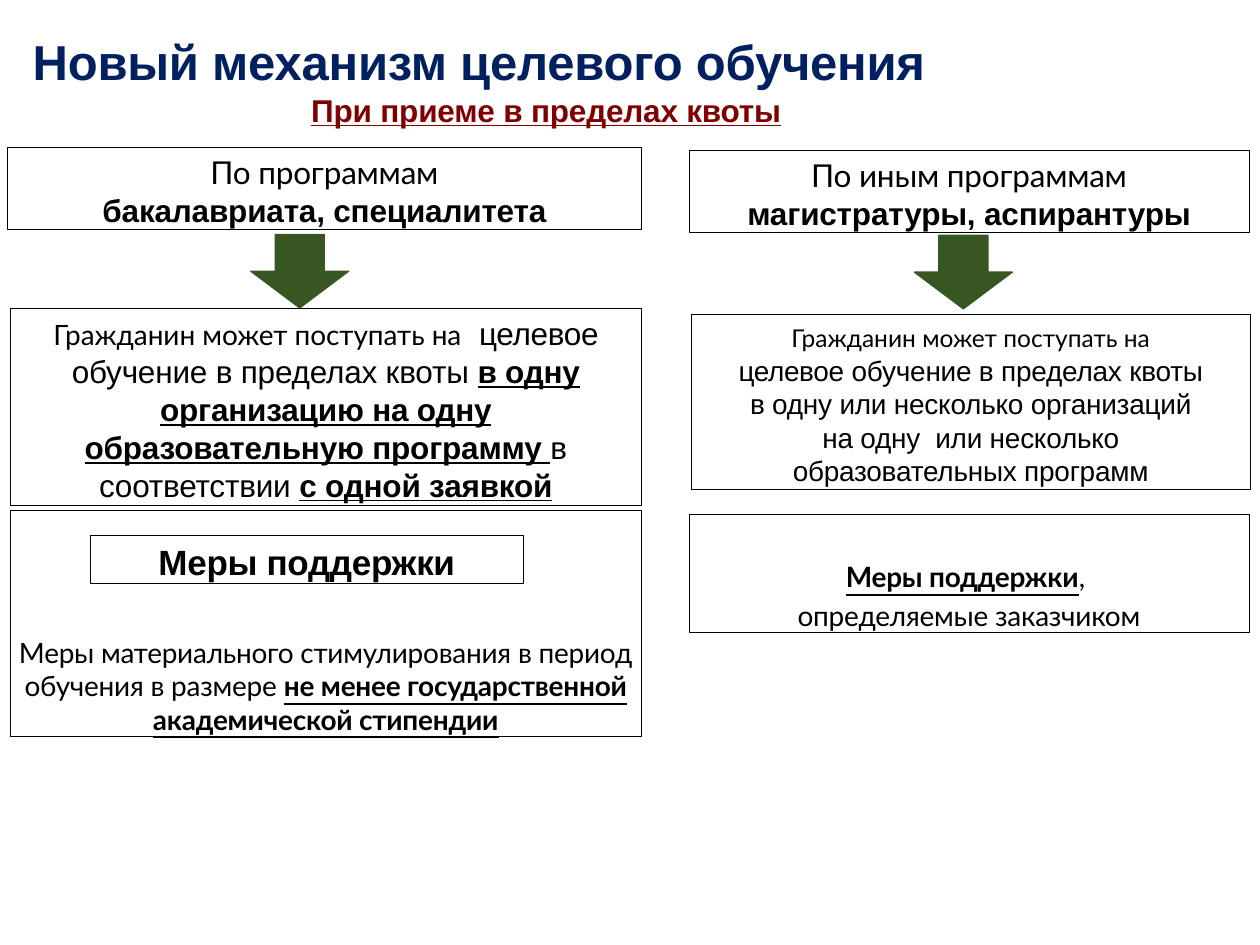
from dataclasses import dataclass

from pptx import Presentation
from pptx.dml.color import RGBColor
from pptx.enum import shapes, text
from pptx.util import Pt


@dataclass(frozen=True)
class Theme:
    navy: str = "002060"
    maroon: str = "800000"
    green: str = "385622"
    black: str = "000000"
    heading_font: str = "Arial"
    body_font: str = "Lato"
    title: int = 28
    support: int = 20
    large: int = 18
    medium: int = 16
    small: int = 14
    border: float = 0.25
    arrow_line: float = 0.75


@dataclass(frozen=True)
class Span:
    words: str
    size: int
    font: str
    color: str = Theme.black
    bold: bool = False
    underline: bool = False
    spacing: float = -0.1


class SlideBuilder:
    def __init__(self, deck, theme):
        self.theme = theme
        self.page = deck.slides.add_slide(deck.slide_layouts[5])

    def fill_text(self, frame, paragraphs, before, insets, anchor, align):
        frame.word_wrap = True
        frame.auto_size = text.MSO_AUTO_SIZE.NONE
        frame.vertical_anchor = anchor
        frame.margin_left = frame.margin_right = Pt(insets[0])
        frame.margin_top, frame.margin_bottom = Pt(insets[1]), Pt(0)
        for index, spans in enumerate(paragraphs):
            para = frame.paragraphs[0] if index == 0 else frame.add_paragraph()
            para.alignment = align[index] if isinstance(align, tuple) else align
            para.space_before = Pt(before[index])
            for span in spans:
                run = para.add_run()
                run.text = span.words
                font = run.font
                font.name, font.size = span.font, Pt(span.size)
                font.bold, font.underline = span.bold, span.underline
                font.color.rgb = RGBColor.from_string(span.color)
                run._r.get_or_add_rPr().set("spc", str(round(span.spacing * 100)))

    def title(self, left, top, width, height, paragraphs):
        box = self.page.shapes.title
        box.left, box.top = Pt(left), Pt(top)
        box.width, box.height = Pt(width), Pt(height)
        align = (text.PP_ALIGN.LEFT, text.PP_ALIGN.CENTER)
        self.fill_text(box.text_frame, paragraphs, (1, 0.1), (0, 0.7),
                       text.MSO_ANCHOR.TOP, align)

    def shape(self, kind, left, top, width, height, color, weight):
        shape = self.page.shapes.add_shape(
            kind, Pt(left), Pt(top), Pt(width), Pt(height))
        shape.shadow.inherit = False
        shape.line.color.rgb = RGBColor.from_string(color)
        shape.line.width = Pt(weight)
        return shape

    def box(self, left, top, width, height, paragraphs, before=(3.2,),
            inset=0, anchor=text.MSO_ANCHOR.TOP):
        box = self.shape(shapes.MSO_SHAPE.RECTANGLE, left, top, width, height,
                         self.theme.black, self.theme.border)
        box.fill.background()
        self.fill_text(box.text_frame, paragraphs, before, (inset, 3.2),
                       anchor, text.PP_ALIGN.CENTER)

    def arrow(self, left, top):
        arrow = self.shape(shapes.MSO_SHAPE.DOWN_ARROW, left, top, 56, 42,
                           self.theme.green, self.theme.arrow_line)
        arrow.fill.solid()
        arrow.fill.fore_color.rgb = RGBColor.from_string(self.theme.green)


def main():
    theme = Theme()
    deck = Presentation()
    deck.slide_width, deck.slide_height = Pt(720), Pt(540)
    slide = SlideBuilder(deck, theme)
    arial, lato = theme.heading_font, theme.body_font
    bottom = text.MSO_ANCHOR.BOTTOM

    slide.title(18.7, 17.3, 586.8, 79.9, [
        [Span("Новый механизм целевого обучения", theme.title, arial,
              theme.navy, bold=True)],
        [Span("При приеме в пределах квоты", theme.large, arial,
              theme.maroon, bold=True, underline=True)],
    ])

    programs = [
        (4.3, 84.2, 362.2, "По программам", "бакалавриата, специалитета"),
        (393.8, 86, 319.9, "По иным программам", "магистратуры, аспирантуры"),
    ]
    for left, top, width, lead, levels in programs:
        slide.box(left, top, width, 46.8, [
            [Span(lead, theme.large, lato)],
            [Span(levels, theme.large, arial, bold=True)],
        ], before=(3.2, 0))

    for left, top in ((143.3, 134), (522.5, 134.5)):
        slide.arrow(left, top)

    def admission(lead_size, size):
        return [
            Span("Гражданин может поступать на", lead_size, lato, spacing=0),
            Span(" ", size, arial, bold=True, spacing=5),
            Span("целевое ", size, arial, spacing=-0.2),
        ]

    slide.box(5.8, 176.4, 360.7, 112.5, [
        admission(theme.medium, theme.large) + [
            Span("обучение в пределах квоты ", theme.large, arial),
            Span("в одну организацию на одну образовательную программу ",
                 theme.large, arial, bold=True, underline=True),
            Span("в соответствии ", theme.large, arial),
            Span("с одной заявкой", theme.large, arial, bold=True, underline=True),
        ]], inset=24)
    slide.box(395.3, 179.5, 319, 100, [
        admission(theme.small, theme.medium) + [
            Span("обучение в пределах квоты в одну или несколько организаций "
                 "на одну  или несколько образовательных программ",
                 theme.medium, arial),
        ]], inset=24)

    slide.box(5.8, 291.8, 360.7, 128.7, [[
        Span("Меры материального стимулирования в период обучения в размере ",
             theme.medium, lato),
        Span("не менее государственной академической стипендии",
             theme.medium, lato, bold=True, underline=True),
    ]], anchor=bottom)
    slide.box(51.8, 305.7, 247, 27.4, [
        [Span("Меры поддержки", theme.support, arial, bold=True, spacing=-0.2)],
    ], inset=7)
    slide.box(393.8, 293.8, 319.9, 67.6, [
        [Span("Меры поддержки", theme.medium, lato, bold=True, underline=True),
         Span(", ", theme.medium, lato)],
        [Span("определяемые заказчиком", theme.medium, lato)],
    ], before=(3.2, 3.2), anchor=bottom)

    deck.save("out.pptx")


if __name__ == "__main__":
    main()
